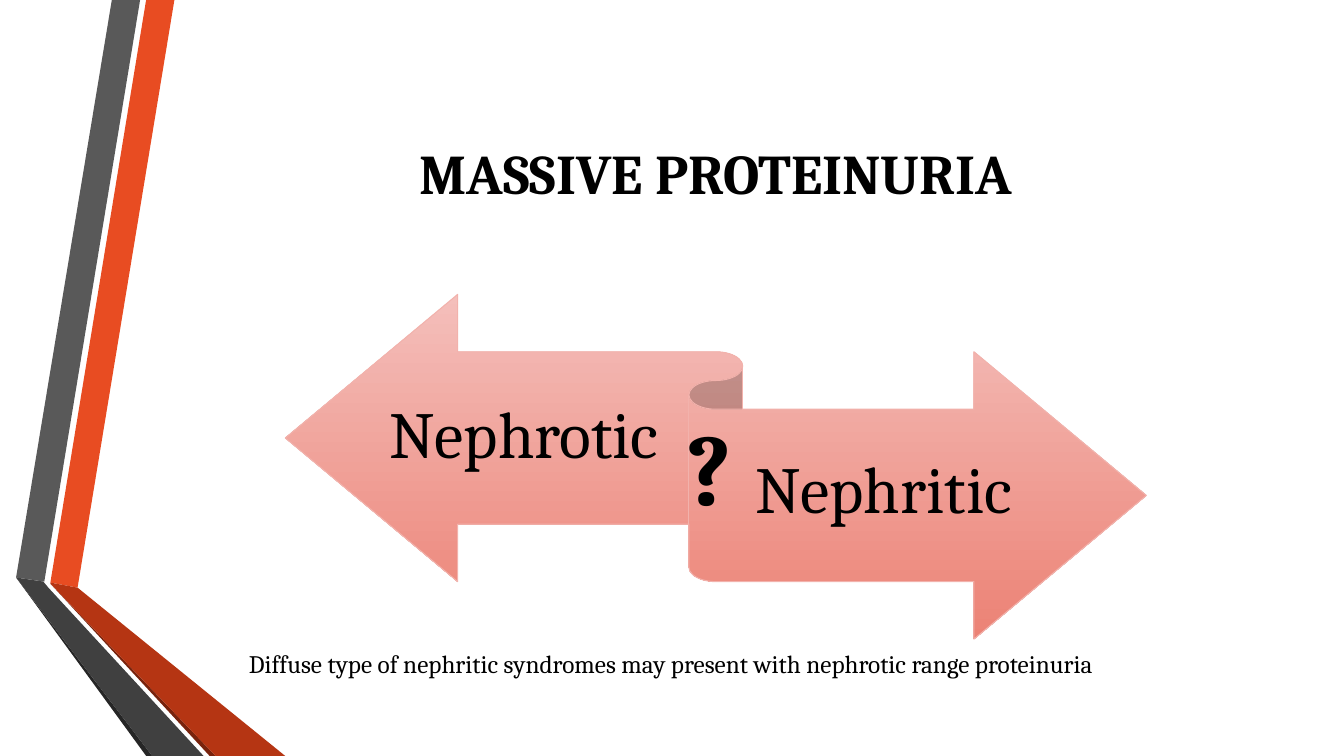
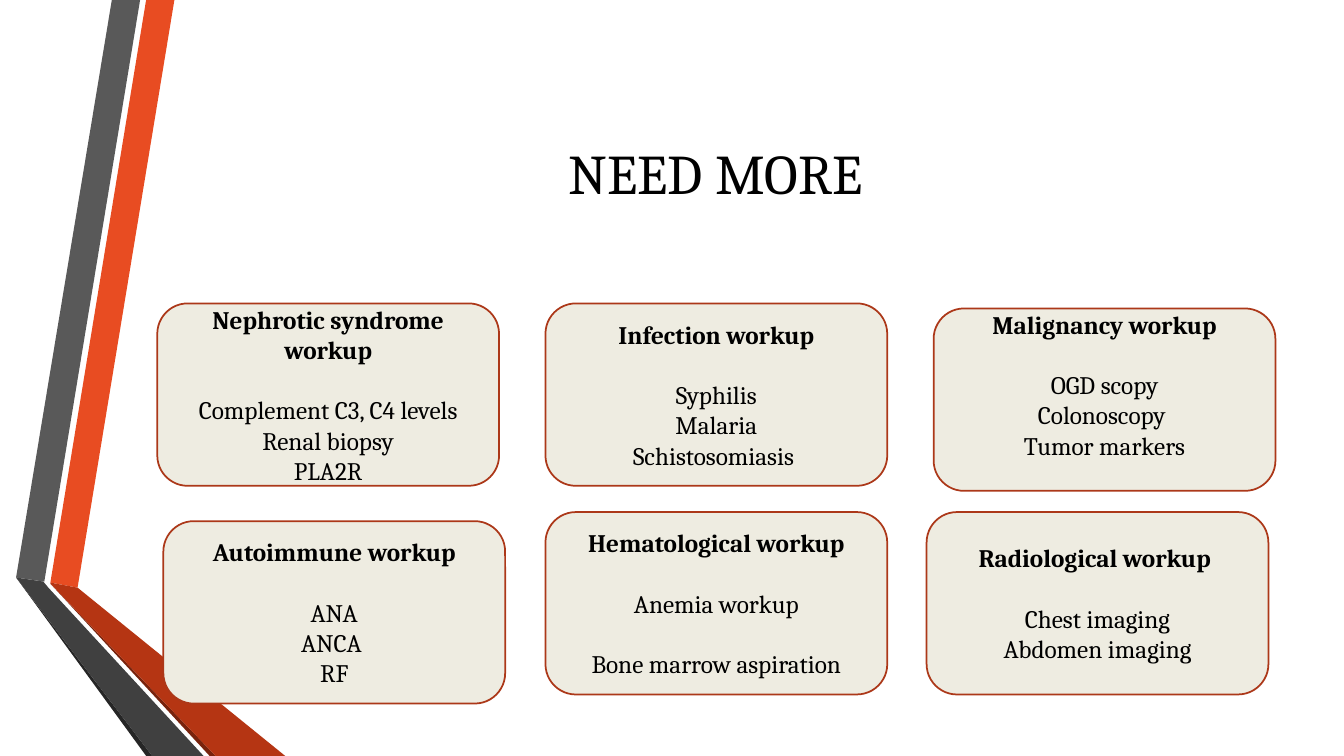
from pptx import Presentation
from pptx.dml.color import RGBColor
from pptx.enum.shapes import MSO_SHAPE
from pptx.enum.text import MSO_ANCHOR, PP_ALIGN
from pptx.util import Inches, Pt

FONT = "Cambria"
BLACK = RGBColor(0x00, 0x00, 0x00)
RIBBON_TOP = RGBColor(0xF4, 0xBF, 0xBB)
RIBBON_BOTTOM = RGBColor(0xEC, 0x82, 0x75)
RIBBON_LINE = RGBColor(0xF2, 0xB2, 0xAC)
CARD_FILL = RGBColor(0xEE, 0xEC, 0xE1)
CARD_LINE = RGBColor(0xAC, 0x38, 0x19)

# Decorative bands shared by all slides: colour, outline in inches
BANDS = [
    (RGBColor(0xE8, 0x4C, 0x22), [(0.5, 5.78), (0.77, 5.83), (1.73, 0), (1.45, 0)]),
    (RGBColor(0x59, 0x59, 0x59), [(1.39, 0), (1.11, 0), (0.16, 5.73), (0.44, 5.77)]),
    (RGBColor(0x26, 0x26, 0x26), [(0.16, 5.73), (1.45, 7.5), (1.51, 7.5)]),
    (RGBColor(0x78, 0x23, 0x0D), [(0.5, 5.79), (2.08, 7.5), (2.14, 7.5)]),
    (RGBColor(0xB5, 0x35, 0x13),
     [(0.5, 5.79), (2.14, 7.5), (2.83, 7.5), (0.77, 5.83), (0.5, 5.78)]),
    (RGBColor(0x40, 0x40, 0x40),
     [(2.02, 7.5), (0.48, 5.83), (0.43, 5.77), (0.16, 5.73), (1.51, 7.5)]),
]

ARROW_LABELS = [("Nephrotic ", (3.86, 3.51, 2.82, 1.67)),
                ("Nephritic", (7.1, 4.06, 3.33, 1.67))]
REMARK = "Diffuse type of nephritic syndromes may present with nephrotic range proteinuria"

CARD_WIDTH, CARD_HEIGHT = 3.39, 1.81
CARD_LEFT, CARD_TOP = 1.56, 3.01
COLUMN_PITCH, ROW_PITCH = 3.85, 2.07
LINE_GAP = Pt(21.6)

# Rows of cards: heading, groups of lines, offset from the grid
CARD_ROWS = [
    [("Nephrotic syndrome workup",
      [["Complement C3, C4 levels", "Renal biopsy", "PLA2R"]], (0, 0)),
     ("Infection workup", [["Syphilis", "Malaria", "Schistosomiasis "]], (0, 0)),
     ("Malignancy workup", [["OGD scopy", "Colonoscopy ", "Tumor markers"]], (0, 0.05))],
    [("Autoimmune workup", [["ANA", "ANCA ", "RF"]], (0.06, 0.09)),
     ("Hematological workup", [["Anemia workup"], ["Bone marrow aspiration"]], (0, 0)),
     ("Radiological workup ", [["Chest imaging", "Abdomen imaging"]], (-0.07, 0))],
]
RAISED_CARD = "Malignancy workup"


def box(left, top, width, height):
    return Inches(left), Inches(top), Inches(width), Inches(height)


def write(paragraph, text, size, bold=False, align=PP_ALIGN.CENTER):
    paragraph.text = text
    paragraph.alignment = align
    font = paragraph.font
    font.name, font.size, font.bold = FONT, Pt(size), bold
    font.color.rgb = BLACK


def add_text(slide, place, text, size, **style):
    frame = slide.shapes.add_textbox(*box(*place)).text_frame
    frame.word_wrap = True
    write(frame.paragraphs[0], text, size, **style)
    return frame


def add_titled_slide(presentation, layout, title, bold=False):
    slide = presentation.slides.add_slide(layout)
    shape = slide.shapes.title
    shape.left, shape.top, shape.width, shape.height = box(1.62, 0.75, 10.96, 1.92)
    shape.text_frame.vertical_anchor = MSO_ANCHOR.MIDDLE
    write(shape.text_frame.paragraphs[0], title, 40, bold)
    return slide


def add_bands(slide, layout):
    """Draw the bands with the slide's builder and move them to its layout."""
    for index, (color, outline) in enumerate(BANDS):
        points = [(Inches(x), Inches(y)) for x, y in outline]
        builder = slide.shapes.build_freeform(*points[0], scale=1.0)
        builder.add_line_segments(points[1:], close=True)
        band = builder.convert_to_shape()
        band.shadow.inherit = False
        band.fill.solid()
        band.fill.fore_color.rgb = color
        band.line.fill.background()
        layout.element.cSld.spTree.insert(2 + index, band.element)


def add_ribbon(slide):
    ribbon = slide.shapes.add_shape(MSO_SHAPE.LEFT_RIGHT_RIBBON,
                                    *box(2.83, 2.92, 8.54, 3.42))
    ribbon.shadow.inherit = False
    ribbon.fill.gradient()
    ribbon.fill.gradient_angle = 270
    stops = zip(ribbon.fill.gradient_stops, (RIBBON_TOP, RIBBON_BOTTOM))
    for position, (stop, color) in enumerate(stops):
        stop.position = position
        stop.color.rgb = color
    ribbon.line.color.rgb = RIBBON_LINE
    ribbon.line.width = Pt(0.75)


def add_card(slide, left, top, heading, groups):
    card = slide.shapes.add_shape(MSO_SHAPE.ROUNDED_RECTANGLE,
                                  *box(left, top, CARD_WIDTH, CARD_HEIGHT))
    card.shadow.inherit = False
    card.fill.solid()
    card.fill.fore_color.rgb = CARD_FILL
    card.line.color.rgb = CARD_LINE
    card.line.width = Pt(1.25)
    frame = card.text_frame
    frame.word_wrap = True
    frame.vertical_anchor = MSO_ANCHOR.MIDDLE
    if heading == RAISED_CARD:
        frame.margin_bottom = Inches(0.35)
    write(frame.paragraphs[0], heading, 18, bold=True)
    for group in groups:
        for index, line in enumerate(group):
            paragraph = frame.add_paragraph()
            write(paragraph, line, 18)
            if index == 0:
                paragraph.space_before = LINE_GAP


def build_proteinuria(slide):
    add_ribbon(slide)
    for label, place in ARROW_LABELS:
        frame = add_text(slide, place, label, 47)
        frame.vertical_anchor = MSO_ANCHOR.MIDDLE
        frame.margin_left = frame.margin_right = 0
        frame.margin_top, frame.margin_bottom = Inches(0.18), Inches(0.2)
        frame.paragraphs[0].line_spacing = 0.9
    add_text(slide, (6.42, 3.97, 1.23, 1.31), "?", 72, bold=True)
    add_text(slide, (2.37, 6.38, 9.17, 0.4), REMARK, 18, align=PP_ALIGN.LEFT)


def build_workups(slide):
    for row, cards in enumerate(CARD_ROWS):
        for column, (heading, groups, (shift_x, shift_y)) in enumerate(cards):
            add_card(slide, CARD_LEFT + column * COLUMN_PITCH + shift_x,
                     CARD_TOP + row * ROW_PITCH + shift_y, heading, groups)


def main():
    presentation = Presentation()
    presentation.slide_width, presentation.slide_height = Inches(13.33), Inches(7.5)
    layout = presentation.slide_layouts.get_by_name("Title Only")
    proteinuria = add_titled_slide(presentation, layout, "MASSIVE PROTEINURIA", bold=True)
    add_bands(proteinuria, layout)
    build_proteinuria(proteinuria)
    build_workups(add_titled_slide(presentation, layout, "NEED MORE"))
    presentation.save("out.pptx")


if __name__ == "__main__":
    main()
